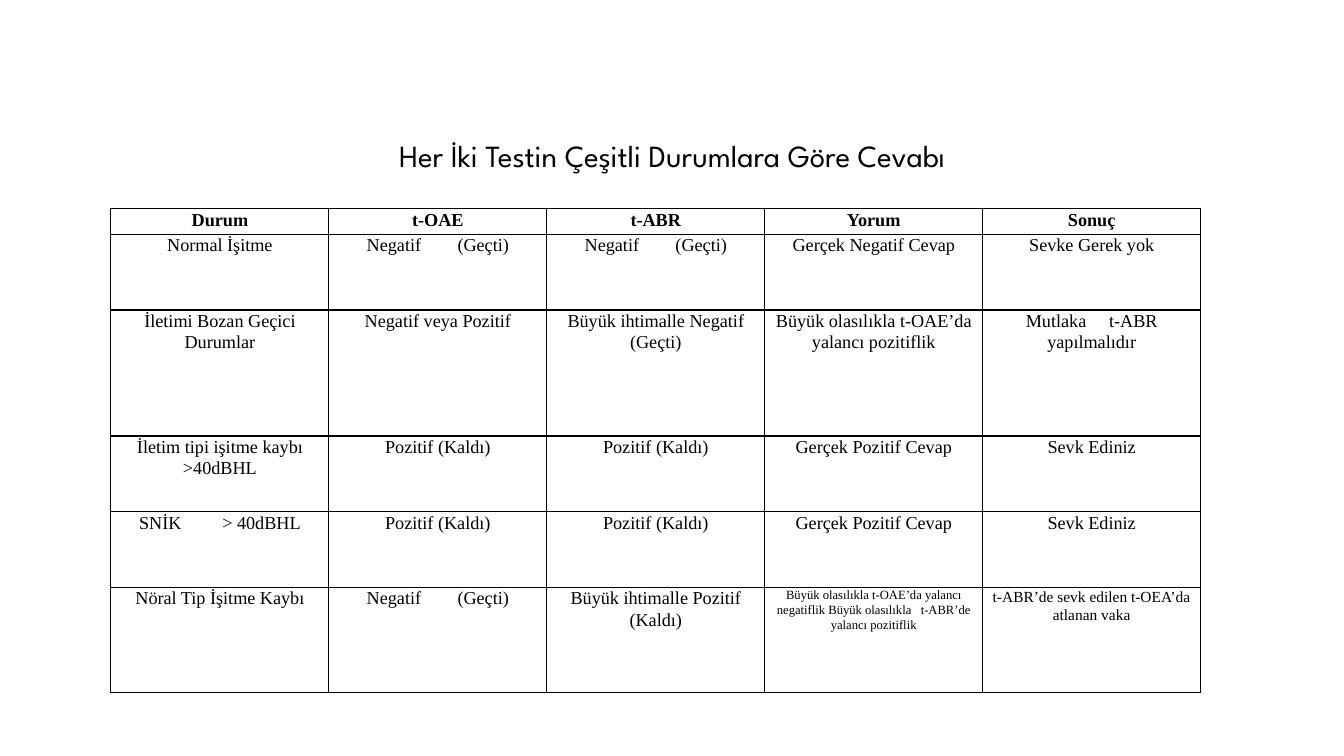
from lxml.etree import SubElement
from pptx import Presentation
from pptx.dml.color import RGBColor
from pptx.enum.text import MSO_ANCHOR, PP_ALIGN
from pptx.oxml.ns import qn
from pptx.util import Pt

COLORS = {"text": "000000", "border": "000000"}
HEADING = {"name": "League Spartan", "size": Pt(22), "bold": False}
BODY = {"name": "Times New Roman", "size": Pt(13), "bold": False}
HEADER = {**BODY, "bold": True}
SMALL = {(5, 3): Pt(9), (5, 4): Pt(11)}  # (row, column): text size

# A tuple is (words, extra gap in points, words)
PASSED = ("Negatif", 22.75, "(Geçti)")
FAILED = "Pozitif (Kaldı)"
TRUE_POSITIVE = [FAILED, FAILED, "Gerçek Pozitif Cevap", "Sevk Ediniz"]
ROWS = [
    ["Durum", "t-OAE", "t-ABR", "Yorum", "Sonuç"],
    ["Normal İşitme", PASSED, PASSED, "Gerçek Negatif Cevap", "Sevke Gerek yok"],
    ["İletimi Bozan Geçici Durumlar", "Negatif veya Pozitif",
     "Büyük ihtimalle Negatif (Geçti)",
     "Büyük olasılıkla t-OAE’da yalancı pozitiflik",
     ("Mutlaka", 13, "t-ABR yapılmalıdır")],
    ["İletim tipi işitme kaybı >40dBHL", *TRUE_POSITIVE],
    [("SNİK", 26, "> 40dBHL"), *TRUE_POSITIVE],
    ["Nöral Tip İşitme Kaybı", PASSED, "Büyük ihtimalle Pozitif (Kaldı)",
     ("Büyük olasılıkla t-OAE’da yalancı negatiflik Büyük olasılıkla", 4.5,
      "t-ABR’de yalancı pozitiflik"),
     "t-ABR’de sevk edilen t-OEA’da atlanan vaka"],
]
ROW_HEIGHTS = [18.5, 54, 90, 54, 54, 75.1]


def add_run(p, text, style):
    r = p.add_run()
    r.text = text
    for name, value in style.items():
        setattr(r.font, name, value)
    r.font.color.rgb = RGBColor.from_string(COLORS["text"])
    return r


def add_heading(s, left, top, width, height):
    sp = s.placeholders[1]
    box = {"left": left, "top": top, "width": width, "height": height}
    for name, value in box.items():
        setattr(sp, name, Pt(value))
    tf = sp.text_frame
    tf.word_wrap = True
    tf.vertical_anchor = MSO_ANCHOR.TOP
    p = tf.paragraphs[0]
    pPr = p._p.get_or_add_pPr()
    pPr.set("marL", "0")
    pPr.set("indent", "0")
    SubElement(pPr, qn("a:buNone"))
    p.alignment, p.line_spacing, p.space_before = PP_ALIGN.CENTER, 0.9, Pt(0)
    add_run(p, "Her İki Testin Çeşitli Durumlara Göre Cevabı", HEADING)


def set_borders(cell):
    tcPr = cell._tc.get_or_add_tcPr()
    for i, side in enumerate(("a:lnL", "a:lnR", "a:lnT", "a:lnB")):
        ln = tcPr.makeelement(qn(side), {"w": str(Pt(1))})
        fill = SubElement(ln, qn("a:solidFill"))
        SubElement(fill, qn("a:srgbClr"), val=COLORS["border"])
        tcPr.insert(i, ln)


def fill_cell(cell, content, style):
    margins = {"margin_left": 4.5, "margin_right": 4.5,
               "margin_top": 0, "margin_bottom": 0}
    for name, value in margins.items():
        setattr(cell, name, Pt(value))
    cell.vertical_anchor = MSO_ANCHOR.TOP
    cell.fill.background()
    set_borders(cell)
    p = cell.text_frame.paragraphs[0]
    p.alignment, p.line_spacing = PP_ALIGN.CENTER, 1.07
    if isinstance(content, str):
        add_run(p, content, style)
        return
    # One space, widened by character spacing
    before, gap, after = content
    add_run(p, before, style)
    space = add_run(p, " ", style)
    space.font._element.set("spc", str(round(gap * 100)))
    add_run(p, after, style)


def add_results_table(s, left, top, width, height):
    columns = len(ROWS[0])
    table = s.shapes.add_table(len(ROWS), columns, Pt(left), Pt(top),
                               Pt(width), Pt(height)).table
    table.first_row = table.horz_banding = False
    for column in table.columns:
        column.width = Pt(width / columns)
    for i, (row, row_height) in enumerate(zip(ROWS, ROW_HEIGHTS)):
        table.rows[i].height = Pt(row_height)
        for j, content in enumerate(row):
            style = HEADER if i == 0 else BODY
            style = {**style, "size": SMALL.get((i, j), style["size"])}
            fill_cell(table.cell(i, j), content, style)


def main():
    prs = Presentation()
    prs.slide_width, prs.slide_height = Pt(960), Pt(540)
    s = prs.slides.add_slide(prs.slide_layouts[1])
    title = s.shapes.title._element
    title.getparent().remove(title)
    # Heading, then the table of test results
    add_heading(s, 54, 97.2, 852, 388)
    add_results_table(s, 79.2, 149, 778.5, sum(ROW_HEIGHTS))
    prs.save("out.pptx")


if __name__ == "__main__":
    main()
